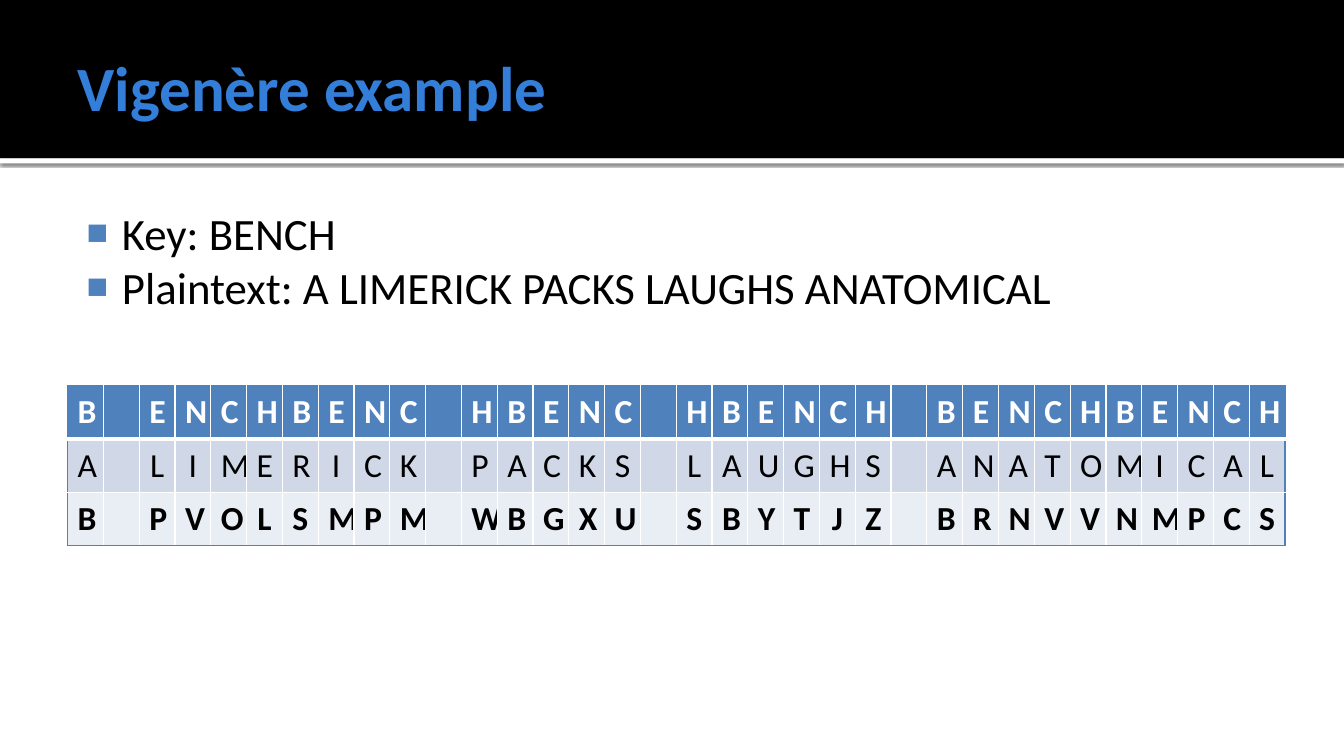
"""Builds a slide showing a Vigenère cipher example."""
from lxml.etree import SubElement
from pptx import Presentation
from pptx.dml.color import RGBColor
from pptx.enum.shapes import MSO_SHAPE
from pptx.enum.text import MSO_ANCHOR, PP_ALIGN
from pptx.oxml.ns import qn
from pptx.util import Inches, Pt

COLORS = {
    "black": "000000",
    "white": "FFFFFF",
    "title": "337ED9",
    "accent": "4F81BD",
    "plain_band": "D0D8E8",
    "cipher_band": "E9EDF4",
}


class SlideBuilder:
    """Holds the style and the current slide."""

    font_name = "Calibri"

    def __init__(self, slide):
        self.slide = slide

    def color(self, name):
        return RGBColor.from_string(COLORS[name])

    def style(self, paragraph, size, color, bold=False):
        font = paragraph.font
        font.name = self.font_name
        font.size = Pt(size)
        font.bold = bold
        font.color.rgb = self.color(color)

    def band(self, top, height, color, shadowed=False):
        band = self.slide.shapes.add_shape(
            MSO_SHAPE.RECTANGLE, 0, Inches(top), Inches(13.33), Inches(height))
        band.shadow.inherit = False
        band.fill.solid()
        band.fill.fore_color.rgb = self.color(color)
        band.line.fill.background()
        if shadowed:
            effects = band._element.spPr.find(qn("a:effectLst"))
            shadow = SubElement(effects, qn("a:outerShdw"), blurRad=str(Pt(2.5)),
                                dist=str(Pt(0.8)), dir="5400000", algn="t", rotWithShape="0")
            shade = SubElement(shadow, qn("a:srgbClr"), val=COLORS["black"])
            SubElement(shade, qn("a:alpha"), val="60000")

    def text(self, lines, box, insets, size, color, bold=False,
             anchor=MSO_ANCHOR.TOP, bulleted=False):
        frame = self.slide.shapes.add_textbox(*map(Inches, box)).text_frame
        frame.word_wrap = True
        frame.vertical_anchor = anchor
        (frame.margin_left, frame.margin_top,
         frame.margin_right, frame.margin_bottom) = map(Inches, insets)
        frame.text = "\n".join(lines)
        for paragraph in frame.paragraphs:
            if bulleted:
                self.bullet(paragraph)
            self.style(paragraph, size, color, bold)

    def bullet(self, paragraph):
        properties = paragraph._p.get_or_add_pPr()
        properties.set("marL", str(Inches(0.48)))
        properties.set("indent", str(Inches(-0.35)))
        tint = SubElement(properties, qn("a:buClr"))
        SubElement(tint, qn("a:srgbClr"), val=COLORS["accent"])
        SubElement(properties, qn("a:buSzPct"), val="80000")
        SubElement(properties, qn("a:buFont"), typeface="Arial")
        SubElement(properties, qn("a:buChar"), char="■")

    def border(self, cell, side, color, width):
        line = SubElement(cell._tc.get_or_add_tcPr(), qn(f"a:ln{side}"), w=str(Pt(width)))
        fill = SubElement(line, qn("a:solidFill"))
        SubElement(fill, qn("a:srgbClr"), val=COLORS[color])

    def letter_table(self, rows, box):
        last_row, last_column = len(rows) - 1, len(rows[0][0]) - 1
        table = self.slide.shapes.add_table(
            last_row + 1, last_column + 1, *map(Inches, box)).table
        table.horz_banding = False
        for column in table.columns:
            column.width = Inches(box[2] / (last_column + 1))
        for r, (letters, fill, color, bold) in enumerate(rows):
            table.rows[r].height = Inches(box[3] / (last_row + 1))
            for c, letter in enumerate(letters):
                cell = table.cell(r, c)
                outer = {"L": c == 0, "R": c == last_column,
                         "T": r == 0, "B": r == last_row}
                for side, is_outer in outer.items():
                    under_header = (r, side) in ((0, "B"), (1, "T"))
                    self.border(cell, side, "accent" if is_outer else "white",
                                3 if under_header else 1)
                cell.fill.solid()
                cell.fill.fore_color.rgb = self.color(fill)
                cell.vertical_anchor = MSO_ANCHOR.MIDDLE
                cell.text = letter.strip()
                paragraph = cell.text_frame.paragraphs[0]
                paragraph.alignment = PP_ALIGN.CENTER
                self.style(paragraph, 24, color, bold)


def main():
    presentation = Presentation()
    presentation.slide_width = Inches(13.33)
    presentation.slide_height = Inches(7.5)
    builder = SlideBuilder(presentation.slides.add_slide(presentation.slide_layouts[6]))

    builder.band(1.57, 0.05, "white", shadowed=True)
    builder.band(0, 1.57, "black")
    builder.text(["Vigenère example"], (0.67, 0.17, 12, 1.37), (0.1, 0.05, 0.05, 0.05),
                 45, "title", bold=True, anchor=MSO_ANCHOR.MIDDLE)
    builder.text(["Key: BENCH", "Plaintext: A LIMERICK PACKS LAUGHS ANATOMICAL"],
                 (0.67, 1.94, 12, 5.06), (0.06, 0.1, 0.1, 0.05),
                 32, "black", bulleted=True)
    builder.letter_table([
        ("B ENCHBENC HBENC HBENCH BENCHBENCH", "accent", "white", True),
        ("A LIMERICK PACKS LAUGHS ANATOMICAL", "plain_band", "black", False),
        ("B PVOLSMPM WBGXU SBYTJZ BRNVVNMPCS", "cipher_band", "black", True),
    ], (0.67, 3.83, 12.08, 1.58))

    presentation.save("out.pptx")


if __name__ == "__main__":
    main()
